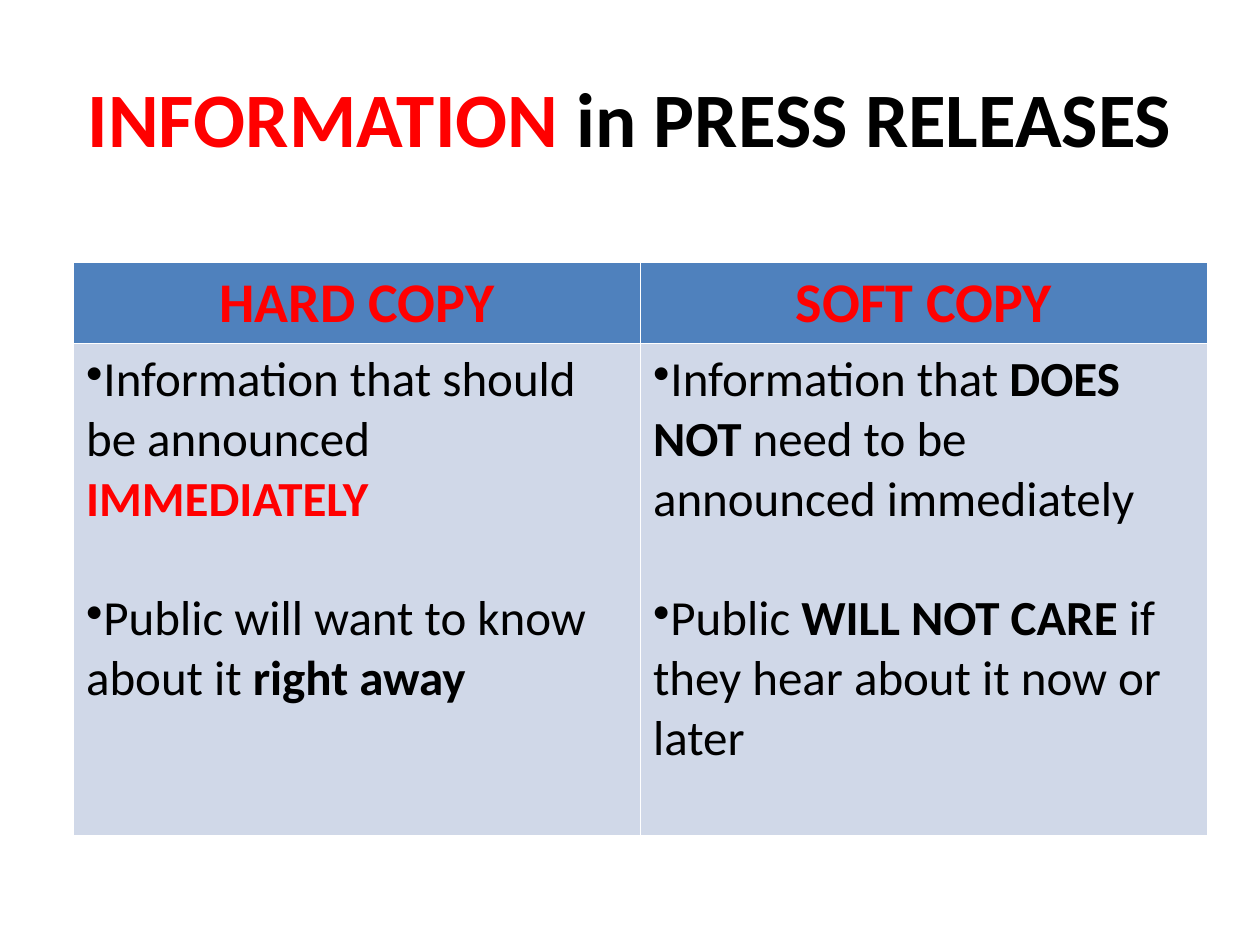
from dataclasses import dataclass

from pptx import Presentation
from pptx.dml.color import RGBColor
from pptx.enum import text
from pptx.oxml.xmlchemy import OxmlElement
from pptx.util import Pt


@dataclass(frozen=True)
class Theme:
    font: str = "Calibri"
    title: int = 44
    header: int = 32
    body: int = 28
    red: str = "FF0000"
    black: str = "000000"
    header_fill: str = "4F81BD"
    body_fill: str = "D0D8E8"


T = Theme()

TITLE = [("INFORMATION", T.red, True), (" in PRESS RELEASES", T.black, True)]
COLUMNS = [
    ("HARD COPY", [
        [("Information that should be announced ", T.black, False),
         ("IMMEDIATELY", T.red, True)],
        [("Public will want to know about it ", T.black, False),
         ("right away", T.black, True)],
    ]),
    ("SOFT COPY", [
        [("Information that ", T.black, False),
         ("DOES NOT ", T.black, True),
         ("need to be announced immediately", T.black, False)],
        [("Public ", T.black, False),
         ("WILL NOT CARE ", T.black, True),
         ("if they hear about it now or later", T.black, False)],
    ]),
]


def add_runs(p, runs, size):
    for words, color, bold in runs:
        r = p.add_run()
        r.text = words
        r.font.color.rgb = RGBColor.from_string(color)
        for name, value in {"name": T.font, "size": Pt(size), "bold": bold}.items():
            setattr(r.font, name, value)


def add_bullet(p):
    bullet = OxmlElement("a:buChar")
    bullet.set("char", "•")
    p._p.get_or_add_pPr().append(bullet)


def fill_cell(cell, color):
    cell.fill.solid()
    cell.fill.fore_color.rgb = RGBColor.from_string(color)


def build_title(s, left, top, width, height):
    sp = s.shapes.title
    box = {"left": left, "top": top, "width": width, "height": height}
    for name, value in box.items():
        setattr(sp, name, Pt(value))
    tf = sp.text_frame
    tf.vertical_anchor = text.MSO_ANCHOR.MIDDLE
    p = tf.paragraphs[0]
    p.alignment = text.PP_ALIGN.CENTER
    add_runs(p, TITLE, T.title)


def build_table(s, left, top, width, height, header_height):
    box = [Pt(v) for v in (left, top, width, height)]
    table = s.shapes.add_table(2, len(COLUMNS), *box).table
    table.horz_banding = False
    table.rows[0].height = Pt(header_height)
    table.rows[1].height = Pt(height - header_height)
    for i, (heading, points) in enumerate(COLUMNS):
        table.columns[i].width = Pt(width / len(COLUMNS))
        head, body = table.cell(0, i), table.cell(1, i)
        fill_cell(head, T.header_fill)
        fill_cell(body, T.body_fill)
        p = head.text_frame.paragraphs[0]
        p.alignment = text.PP_ALIGN.CENTER
        add_runs(p, [(heading, T.red, True)], T.header)
        tf = body.text_frame
        for j, runs in enumerate(points):
            p = tf.add_paragraph() if j else tf.paragraphs[0]
            if j:
                p.space_before = Pt(34)
            add_bullet(p)
            add_runs(p, runs, T.body)


def main():
    prs = Presentation()
    prs.slide_width, prs.slide_height = Pt(720), Pt(540)
    s = prs.slides.add_slide(prs.slide_layouts[5])
    build_title(s, 36, 21.6, 648, 90)
    build_table(s, 42, 150, 648, 327, 46)
    prs.save("out.pptx")


if __name__ == "__main__":
    main()
